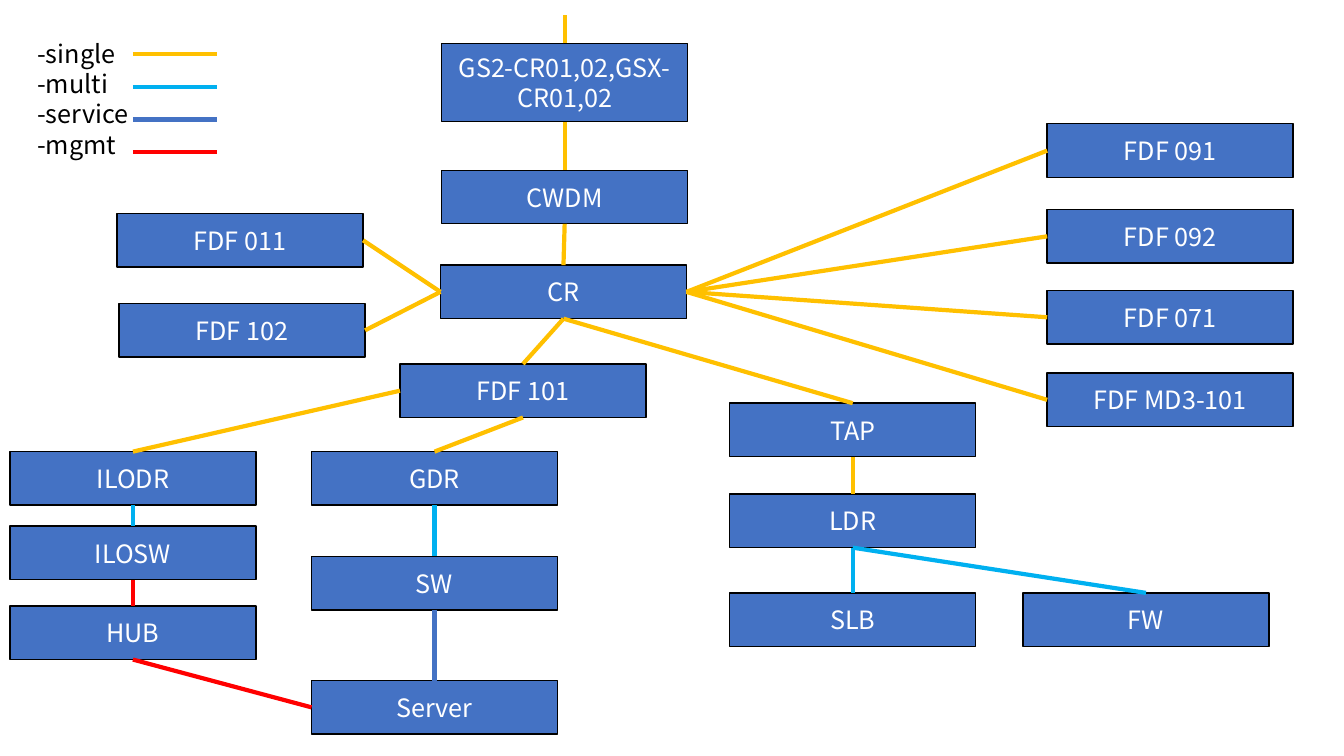
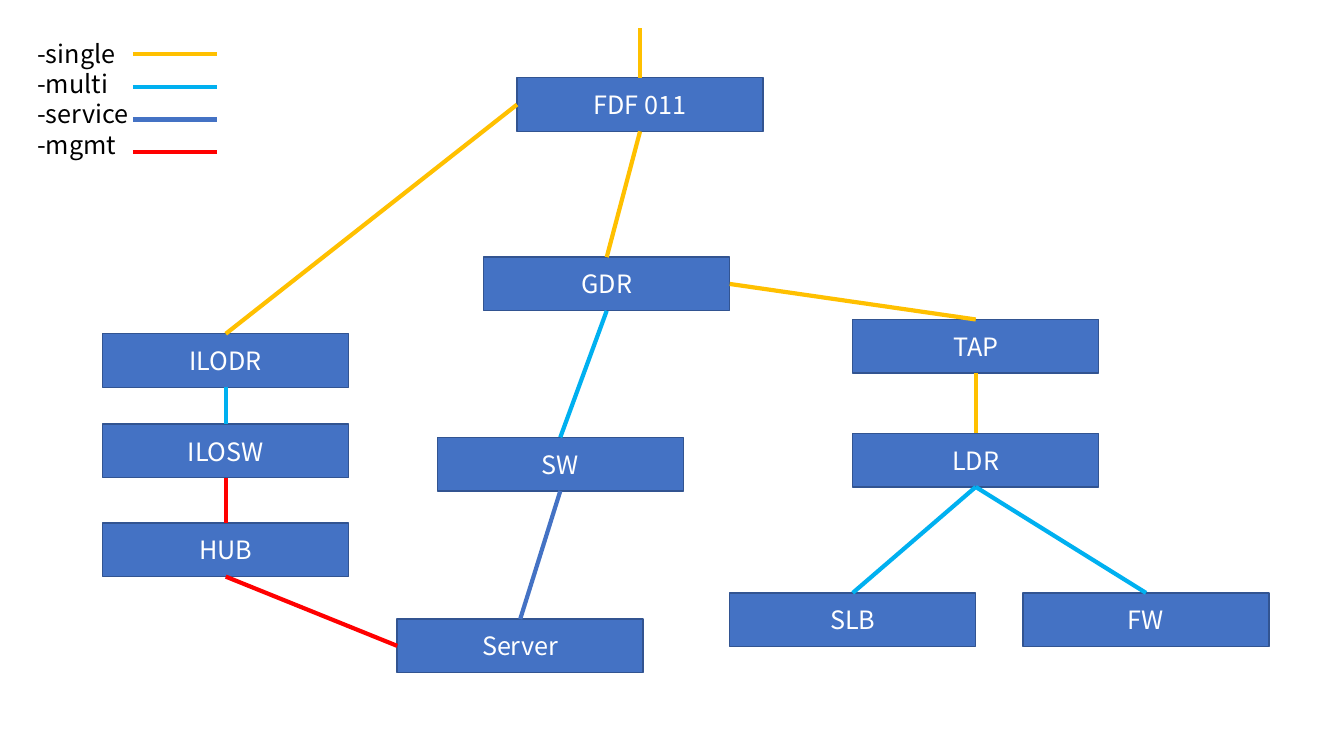
from lxml import etree
from pptx import Presentation, util as u
from pptx.dml import color as c
from pptx.enum import shapes, text
from pptx.oxml import ns

CABLES = {"single": "FFC000", "multi": "00B0F0", "service": "4472C4", "mgmt": "FF0000"}
SITES = {"top": 0, "left": 1, "bottom": 2, "right": 3}
FONT = {"name": "Noto Sans CJK KR", "size": u.Pt(18)}
BOX_FRAME = {"word_wrap": True, "vertical_anchor": text.MSO_ANCHOR.MIDDLE}
LEGEND_FRAME = {"word_wrap": True, "auto_size": text.MSO_AUTO_SIZE.SHAPE_TO_FIT_TEXT}
BOX_WIDTH, BOX_HEIGHT = 6.2, 1.35

PAGES = [
    {
        "outline": "000000",
        "root": "GS2-CR01,02,GSX-CR01,02",
        "feed_top": 0.38,
        "heights": {"GS2-CR01,02,GSX-CR01,02": 1.98},
        "boxes": {
            "GS2-CR01,02,GSX-CR01,02": (11.13, 1.09),
            "CWDM": (11.13, 4.29),
            "CR": (11.1, 6.68),
            "FDF 011": (2.95, 5.38),
            "FDF 102": (3, 7.65),
            "FDF 091": (26.39, 3.12),
            "FDF 092": (26.39, 5.28),
            "FDF 071": (26.39, 7.32),
            "FDF MD3-101": (26.39, 9.4),
            "FDF 101": (10.08, 9.17),
            "ILODR": (0.25, 11.38),
            "ILOSW": (0.25, 13.26),
            "HUB": (0.25, 15.27),
            "GDR": (7.85, 11.38),
            "SW": (7.85, 14.02),
            "Server": (7.85, 17.15),
            "TAP": (18.39, 10.16),
            "LDR": (18.39, 12.45),
            "SLB": (18.39, 14.94),
            "FW": (25.78, 14.94),
        },
        "links": [
            ("GS2-CR01,02,GSX-CR01,02", "bottom", "CWDM", "top", "single"),
            ("CWDM", "bottom", "CR", "top", "single"),
            ("FDF 011", "right", "CR", "left", "single"),
            ("FDF 102", "right", "CR", "left", "single"),
            ("CR", "right", "FDF 091", "left", "single"),
            ("CR", "right", "FDF 092", "left", "single"),
            ("CR", "right", "FDF 071", "left", "single"),
            ("CR", "right", "FDF MD3-101", "left", "single"),
            ("CR", "bottom", "FDF 101", "top", "single"),
            ("CR", "bottom", "TAP", "top", "single"),
            ("FDF 101", "left", "ILODR", "top", "single"),
            ("FDF 101", "bottom", "GDR", "top", "single"),
        ],
    },
    {
        "outline": "325491",
        "root": "FDF 011",
        "feed_top": 0.71,
        "heights": {},
        "boxes": {
            "FDF 011": (13.03, 1.96),
            "GDR": (12.19, 6.48),
            "ILODR": (2.59, 8.41),
            "ILOSW": (2.59, 10.69),
            "HUB": (2.59, 13.18),
            "SW": (11.02, 11.02),
            "Server": (10.01, 15.6),
            "TAP": (21.49, 8.05),
            "LDR": (21.49, 10.92),
            "SLB": (18.39, 14.94),
            "FW": (25.78, 14.94),
        },
        "links": [
            ("FDF 011", "left", "ILODR", "top", "single"),
            ("FDF 011", "bottom", "GDR", "top", "single"),
            ("GDR", "right", "TAP", "top", "single"),
        ],
    },
]
SHARED_LINKS = [
    ("ILODR", "bottom", "ILOSW", "top", "multi"),
    ("ILOSW", "bottom", "HUB", "top", "mgmt"),
    ("HUB", "bottom", "Server", "left", "mgmt"),
    ("GDR", "bottom", "SW", "top", "multi"),
    ("SW", "bottom", "Server", "top", "service"),
    ("TAP", "bottom", "LDR", "top", "single"),
    ("LDR", "bottom", "SLB", "top", "multi"),
    ("LDR", "bottom", "FW", "top", "multi"),
]


def dress(target, values, colour=None):
    for name, value in values.items():
        setattr(target, name, value)
    if colour:
        paint = target.color if hasattr(target, "color") else target.fore_color
        paint.rgb = c.RGBColor.from_string(colour)


def add_cable(page, cable, x1=0, y1=0, x2=0, y2=0):
    line = page.shapes.add_connector(
        shapes.MSO_CONNECTOR.STRAIGHT, u.Cm(x1), u.Cm(y1), u.Cm(x2), u.Cm(y2))
    dress(line.line, {"width": u.Pt(3)}, CABLES[cable])
    etree.SubElement(line._element.spPr, ns.qn("a:effectLst"))
    return line


deck = Presentation()
dress(deck, {"slide_width": u.Cm(33.87), "slide_height": u.Cm(19.05)})

for plan in PAGES:
    page = deck.slides.add_slide(deck.slide_layouts[6])
    boxes = {}
    for label, (left, top) in plan["boxes"].items():
        height = plan["heights"].get(label, BOX_HEIGHT)
        box = page.shapes.add_shape(
            shapes.MSO_SHAPE.RECTANGLE, u.Cm(left), u.Cm(top), u.Cm(BOX_WIDTH), u.Cm(height))
        box.shadow.inherit = False
        box.fill.solid()
        dress(box.fill, {}, "4472C4")
        dress(box.line, {"width": u.Pt(1)}, plan["outline"])
        dress(box.text_frame, BOX_FRAME)
        para = box.text_frame.paragraphs[0]
        para.alignment = text.PP_ALIGN.CENTER
        span = para.add_run()
        span.text = label
        dress(span.font, FONT, "FFFFFF")
        boxes[label] = box

    for start, start_side, end, end_side, cable in plan["links"] + SHARED_LINKS:
        line = add_cable(page, cable)
        line.begin_connect(boxes[start], SITES[start_side])
        line.end_connect(boxes[end], SITES[end_side])

    left, top = plan["boxes"][plan["root"]]
    middle = left + BOX_WIDTH / 2
    feed = add_cable(page, "single", middle, top, middle, plan["feed_top"])
    feed.begin_connect(boxes[plan["root"]], SITES["top"])

    legend = page.shapes.add_textbox(u.Cm(0.69), u.Cm(0.84), u.Cm(3.15), u.Cm(3.33))
    dress(legend.text_frame, LEGEND_FRAME)
    for row, cable in enumerate(CABLES):
        para = legend.text_frame.add_paragraph() if row else legend.text_frame.paragraphs[0]
        span = para.add_run()
        span.text = f"-{cable}"
        dress(span.font, FONT, "000000")
        y = 1.37 + 0.82 * row
        add_cable(page, cable, 3.35, y, 5.46, y)

deck.save("out.pptx")
